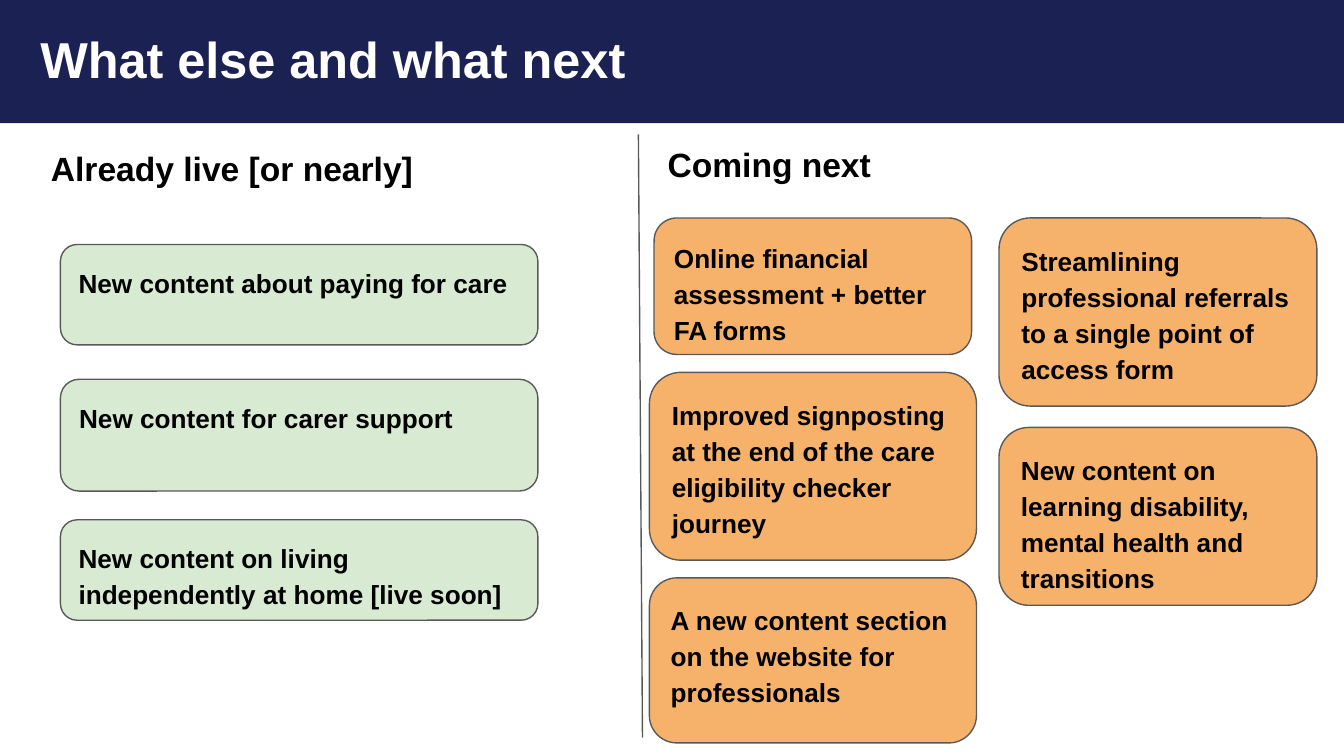
from lxml.etree import SubElement
from pptx import Presentation
from pptx.dml.color import RGBColor
from pptx.enum.shapes import MSO_CONNECTOR, MSO_SHAPE
from pptx.enum.text import MSO_ANCHOR, PP_ALIGN
from pptx.oxml.ns import qn
from pptx.util import Pt

NAVY, GREEN, ORANGE = "1B2152", "D9EAD3", "F6B26B"
GREY, BLACK, WHITE = "595959", "000000", "FFFFFF"

TITLE = "What else and what next"
# text, left, top, width
HEADINGS = [
    ("Already live [or nearly]", 20.2, 72, 302.4),
    ("Coming next", 350.6, 69.8, 260),
]
# fill, left, width, cards as (text, top, height)
COLUMNS = [
    (GREEN, 32.4, 255.8, [
        ("New content about paying for care", 131, 53.8),
        ("New content for carer support", 203.2, 59.9),
        ("New content on living independently at home [live soon]", 278.5, 53.8),
    ]),
    (ORANGE, 350.4, 170.1, [
        ("Online financial assessment + better FA forms", 116.8, 73.1),
    ]),
    (ORANGE, 347.9, 175.2, [
        ("Improved signposting at the end of the care eligibility checker journey",
         199.5, 100.6),
        ("A new content section on the website for professionals", 309.6, 88.4),
    ]),
    (ORANGE, 535.2, 170.3, [
        ("Streamlining professional referrals to a single point of access form",
         116.8, 100.8),
        ("New content on learning disability, mental health and transitions",
         229, 95.3),
    ]),
]
DIVIDER = (342, 72, 344.2, 395.2)


def rgb(value):
    return RGBColor.from_string(value)


def write(shape, text, size, color=BLACK, spacing=None,
          anchor=MSO_ANCHOR.TOP, left_inset=7.2):
    tf = shape.text_frame
    frame = {"word_wrap": True, "vertical_anchor": anchor,
             "margin_left": Pt(left_inset), "margin_right": Pt(7.2),
             "margin_top": Pt(7.2), "margin_bottom": Pt(7.2)}
    for name, value in frame.items():
        setattr(tf, name, value)
    p = tf.paragraphs[0]
    p.alignment = PP_ALIGN.LEFT
    p.line_spacing = spacing
    r = p.add_run()
    r.text = text
    for name, value in {"name": "Arial", "size": Pt(size), "bold": True}.items():
        setattr(r.font, name, value)
    r.font.color.rgb = rgb(color)


def add_box(s, kind, box, fill, line=None):
    sp = s.shapes.add_shape(kind, *map(Pt, box))
    sp.shadow.inherit = False
    sp.fill.solid()
    sp.fill.fore_color.rgb = rgb(fill)
    if line:
        sp.line.color.rgb = rgb(line)
        sp.line.width = Pt(0.75)
    else:
        sp.line.fill.background()
    return sp


def add_divider(s):
    line = s.shapes.add_connector(MSO_CONNECTOR.STRAIGHT, *map(Pt, DIVIDER))
    line.line.color.rgb = rgb(GREY)
    line.line.width = Pt(0.75)
    SubElement(line._element.spPr, qn("a:effectLst"))


def main():
    prs = Presentation()
    prs.slide_width, prs.slide_height = Pt(720), Pt(405)
    s = prs.slides.add_slide(prs.slide_layouts[6])

    banner = add_box(s, MSO_SHAPE.RECTANGLE, (0, -3.6, 720, 69.6), NAVY)
    write(banner, TITLE, 27, WHITE, anchor=MSO_ANCHOR.MIDDLE, left_inset=21.6)

    for text, left, top, width in HEADINGS:
        heading = s.shapes.add_textbox(Pt(left), Pt(top), Pt(width), Pt(35.3))
        write(heading, text, 18)

    add_divider(s)

    for fill, left, width, cards in COLUMNS:
        for text, top, height in cards:
            card = add_box(s, MSO_SHAPE.FLOWCHART_ALTERNATE_PROCESS,
                           (left, top, width, height), fill, GREY)
            write(card, text, 14, spacing=1.15)

    prs.save("out.pptx")


if __name__ == "__main__":
    main()
